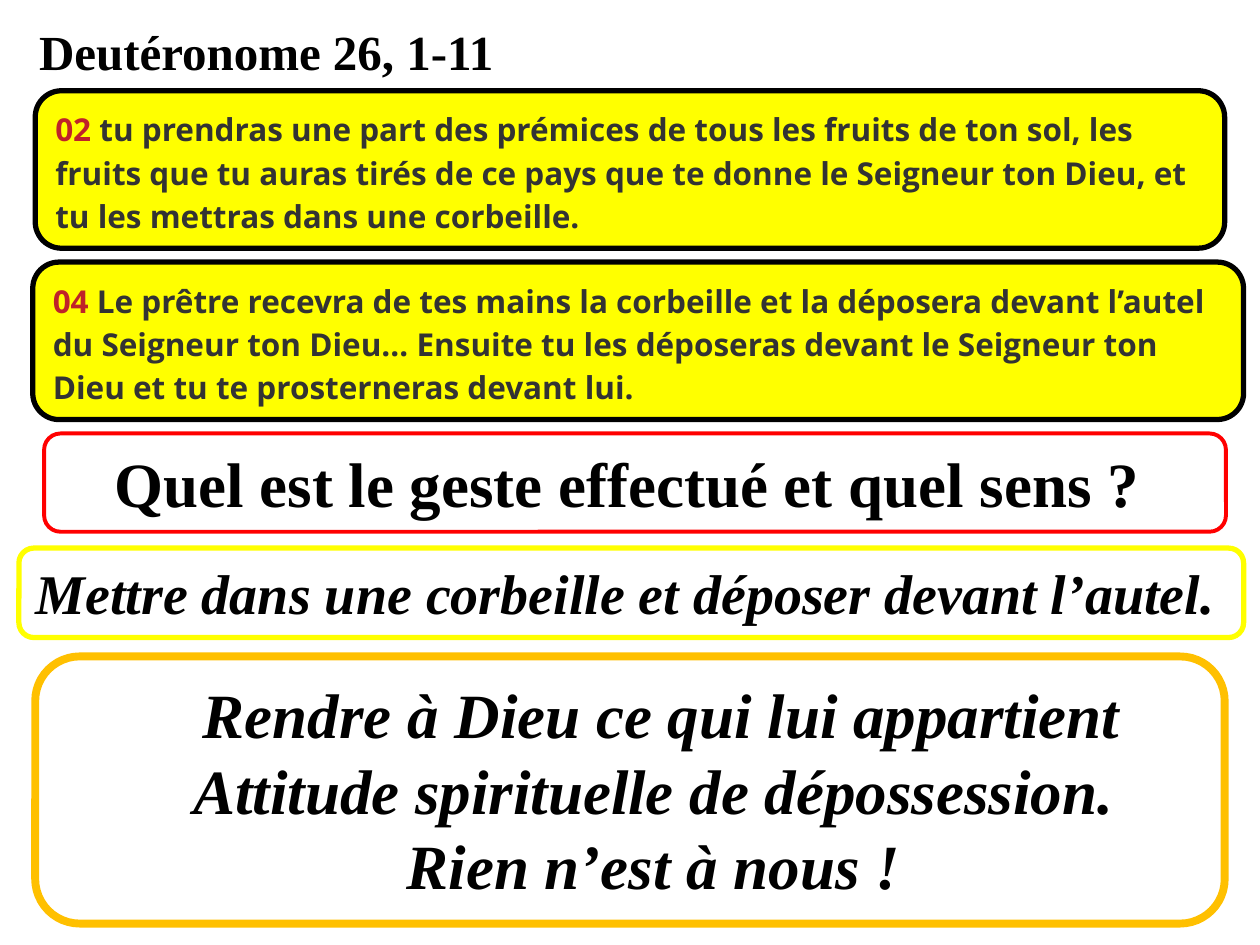
from pptx import Presentation
from pptx.dml.color import RGBColor
from pptx.enum.shapes import MSO_SHAPE
from pptx.enum.text import MSO_ANCHOR, MSO_AUTO_SIZE, PP_ALIGN
from pptx.util import Inches, Pt

SERIF, SANS = "Times New Roman", "Open Sans"
BLACK, GREY, CRIMSON = "000000", "333333", "BF2329"
RED, YELLOW, AMBER = "FF0000", "FFFF00", "FFC000"


def color(value):
    return RGBColor.from_string(value)


def style(r, size, font=SERIF, ink=BLACK, italic=None):
    r.font.size = Pt(size)
    r.font.name = font
    r.font.bold = True
    r.font.italic = italic
    r.font.color.rgb = color(ink)


def place(sp, left, top, width, height):
    sp.left, sp.top = Inches(left), Inches(top)
    sp.width, sp.height = Inches(width), Inches(height)


def add_title(s, text, box):
    sp = s.shapes.title
    place(sp, *box)
    tf = sp.text_frame
    tf.text = text
    tf.vertical_anchor = MSO_ANCHOR.TOP
    tf.word_wrap = False
    p = tf.paragraphs[0]
    p.alignment = PP_ALIGN.LEFT
    style(p.runs[0], 28)


def add_box(s, box, line, weight, fill=None):
    """Rounded frame; returns its text frame."""
    sp = s.shapes.add_shape(MSO_SHAPE.ROUNDED_RECTANGLE, *map(Inches, box))
    sp.shadow.inherit = False
    sp.line.color.rgb = color(line)
    sp.line.width = Pt(weight)
    if fill:
        sp.fill.solid()
        sp.fill.fore_color.rgb = color(fill)
    else:
        sp.fill.background()
    tf = sp.text_frame
    tf.word_wrap = True
    tf.auto_size = MSO_AUTO_SIZE.SHAPE_TO_FIT_TEXT
    tf.vertical_anchor = MSO_ANCHOR.TOP
    return tf


def add_verse(s, box, number, text):
    tf = add_box(s, box, BLACK, 3, YELLOW)
    p = tf.paragraphs[0]
    p.alignment = PP_ALIGN.LEFT
    p.line_spacing = 1.15
    p.space_after = Pt(10)
    for part, ink in ((number, CRIMSON), (text, GREY)):
        r = p.add_run()
        r.text = part
        style(r, 18, SANS, ink)


def add_statement(s, box, line, weight, lines, size, align=PP_ALIGN.CENTER,
                  italic=True, indent=0):
    tf = add_box(s, box, line, weight)
    tf.text = "\n".join(lines)
    for p in tf.paragraphs:
        p.alignment = align
        if indent:
            p.level = 1
            pPr = p._p.get_or_add_pPr()
            pPr.set("marL", str(Inches(indent)))
            pPr.set("indent", "0")
        style(p.runs[0], size, italic=italic)


def main():
    prs = Presentation()
    prs.slide_width, prs.slide_height = Inches(10), Inches(7.5)
    s = prs.slides.add_slide(prs.slide_layouts[5])

    add_title(s, "Deutéronome 26, 1-11", (0.21, 0.12, 4.02, 0.57))

    # Bible verses
    add_verse(s, (0.28, 0.72, 9.44, 1.25), "02",
              " tu prendras une part des prémices de tous les fruits de ton sol, "
              "les fruits que tu auras tirés de ce pays que te donne le Seigneur "
              "ton Dieu, et tu les mettras dans une corbeille.")
    add_verse(s, (0.26, 2.08, 9.61, 1.25), "04",
              " Le prêtre recevra de tes mains la corbeille et la déposera devant "
              "l’autel du Seigneur ton Dieu… Ensuite tu les déposeras devant le "
              "Seigneur ton Dieu et tu te prosterneras devant lui.")

    # Question and answers
    add_statement(s, (0.35, 3.44, 9.38, 0.78), RED, 2.25,
                  ["Quel est le geste effectué et quel sens ? "], 36, italic=None)
    add_statement(s, (0.15, 4.35, 9.72, 0.71), YELLOW, 3,
                  ["Mettre dans une corbeille et déposer devant l’autel."], 32,
                  align=PP_ALIGN.LEFT)
    add_statement(s, (0.28, 5.21, 9.44, 2.12), AMBER, 4.5,
                  ["Rendre à Dieu ce qui lui appartient",
                   "Attitude spirituelle de dépossession. ",
                   "Rien n’est à nous ! "], 36, indent=0.5)

    prs.save("out.pptx")


if __name__ == "__main__":
    main()
